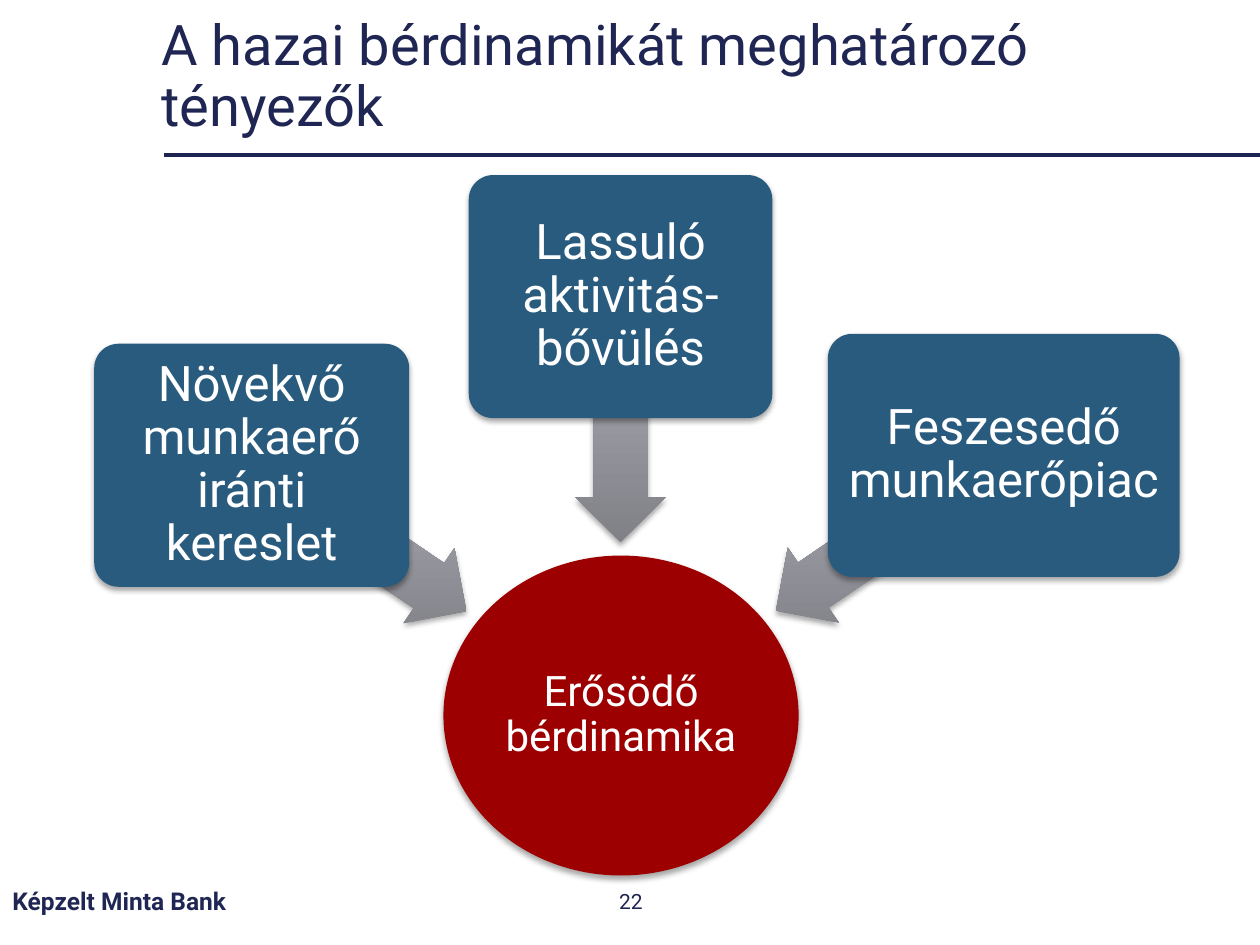
import pptx
import pptx.dml.color
import pptx.enum.shapes
import pptx.enum.text
import pptx.oxml
import pptx.oxml.ns
import pptx.util

Cm = pptx.util.Cm
RGBColor = pptx.dml.color.RGBColor
MSO_SHAPE = pptx.enum.shapes.MSO_SHAPE
PP_ALIGN = pptx.enum.text.PP_ALIGN

NAVY = RGBColor(0x20, 0x26, 0x53)
RULE = RGBColor(0x1E, 0x24, 0x52)
BLUE = RGBColor(0x29, 0x5B, 0x7E)
RED = RGBColor(0x9C, 0x00, 0x00)
WHITE = RGBColor(0xFF, 0xFF, 0xFF)
BLACK = RGBColor(0x00, 0x00, 0x00)
GREY_STOPS = (
    (0, RGBColor(0x80, 0x80, 0x87)),
    (80, RGBColor(0xA6, 0xA6, 0xAF)),
    (100, RGBColor(0xA6, 0xA7, 0xB0)),
)
FONT = "Roboto"
CARD_HEIGHT = 4.9
ARROW_HEIGHT = 1.83

# Card text, left, top, width; arrow centre x, centre y, length, rotation (cm, degrees)
FACTORS = (
    ("Növekvő munkaerő iránti kereslet", (0, 3.4, 6.35), (5.34, 7.32, 5.23, 214.2)),
    ("Lassuló aktivitás-bővülés", (7.55, 0, 6.12), (10.61, 4.93, 4.95, 270)),
    ("Feszesedő munkaerőpiac", (14.79, 3.2, 7.09), (16.03, 7.22, 5.54, 325.7)),
)


def write_text(shape, text, *, size, color, bold=False, align=PP_ALIGN.LEFT,
               line_spacing=None, inset=None):
    frame = shape.text_frame
    frame.word_wrap = True
    frame.vertical_anchor = pptx.enum.text.MSO_ANCHOR.MIDDLE
    if inset is not None:
        frame.margin_left = frame.margin_right = Cm(inset)
        frame.margin_top = frame.margin_bottom = Cm(inset)
    paragraph = frame.paragraphs[0]
    paragraph.alignment = align
    paragraph.line_spacing = line_spacing
    run = paragraph.add_run()
    run.text = text
    run.font.name = FONT
    run.font.size = pptx.util.Pt(size)
    run.font.bold = bold
    run.font.color.rgb = color


def add_drop_shadow(shape):
    shape.shadow.inherit = False
    effects = shape._element.spPr.find(pptx.oxml.ns.qn("a:effectLst"))
    effects.append(pptx.oxml.parse_xml(
        f'<a:outerShdw {pptx.oxml.ns.nsdecls("a")} blurRad="40000" dist="23000" '
        f'dir="5400000" rotWithShape="0"><a:srgbClr val="{BLACK}">'
        '<a:alpha val="35000"/></a:srgbClr></a:outerShdw>'))


def add_block(slide, preset, left, top, width, height, color=None):
    """Add a borderless shape with a drop shadow; lengths in cm."""
    shape = slide.shapes.add_shape(preset, Cm(left), Cm(top), Cm(width), Cm(height))
    if color is not None:
        shape.fill.solid()
        shape.fill.fore_color.rgb = color
    shape.line.fill.background()
    add_drop_shadow(shape)
    return shape


def fill_grey_gradient(shape):
    """Fill from dark at the bottom to light at the top, whatever the rotation."""
    stops = "".join(f'<a:gs pos="{position * 1000}"><a:srgbClr val="{color}"/></a:gs>'
                    for position, color in GREY_STOPS)
    gradient = pptx.oxml.parse_xml(
        f'<a:gradFill {pptx.oxml.ns.nsdecls("a")} rotWithShape="0"><a:gsLst>{stops}'
        '</a:gsLst><a:lin ang="16200000" scaled="0"/></a:gradFill>')
    geometry = shape._element.spPr.find(pptx.oxml.ns.qn("a:prstGeom"))
    geometry.addnext(gradient)


def add_arrow(slide, center_x, center_y, length, rotation):
    arrow = add_block(slide, MSO_SHAPE.LEFT_ARROW, center_x - length / 2,
                      center_y - ARROW_HEIGHT / 2, length, ARROW_HEIGHT)
    arrow.adjustments[0] = 0.6
    arrow.adjustments[1] = 0.5
    arrow.rotation = rotation
    fill_grey_gradient(arrow)


def add_card(slide, text, left, top, width):
    card = add_block(slide, MSO_SHAPE.ROUNDED_RECTANGLE, left, top, width, CARD_HEIGHT, BLUE)
    card.adjustments[0] = 0.1
    write_text(card, text, size=28, color=WHITE, align=PP_ALIGN.CENTER,
               line_spacing=0.9, inset=0.15)


def add_heading(slide, left, top, width, height):
    title = slide.shapes.title
    title.left, title.top, title.width, title.height = map(Cm, (left, top, width, height))
    write_text(title, "A hazai bérdinamikát meghatározó tényezők", size=32, color=NAVY,
               line_spacing=0.9)
    rule_top = Cm(top + height + 0.5)
    rule = slide.shapes.add_connector(pptx.enum.shapes.MSO_CONNECTOR.STRAIGHT,
                                      Cm(left + 0.3), rule_top, Cm(25.4), rule_top)
    rule.line.color.rgb = RULE
    rule.line.width = pptx.util.Pt(2.25)
    rule._element.spPr.append(
        pptx.oxml.parse_xml(f'<a:effectLst {pptx.oxml.ns.nsdecls("a")}/>'))


def add_factor_diagram(slide, left, top):
    """Draw the factor cards with arrows converging on the outcome circle."""
    outcome = add_block(slide, MSO_SHAPE.OVAL, left + 7.04, top + 7.67, 7.16, 6.45, RED)
    write_text(outcome, "Erősödő bérdinamika", size=24, color=WHITE,
               align=PP_ALIGN.CENTER, line_spacing=0.9, inset=0.05)
    for text, (card_x, card_y, width), (arrow_x, arrow_y, length, rotation) in FACTORS:
        add_arrow(slide, left + arrow_x, top + arrow_y, length, rotation)
        add_card(slide, text, left + card_x, top + card_y, width)


def add_footer(slide, left, top, height):
    for text, offset, width, text_format in (
        ("Képzelt Minta Bank", 0, 8.59, {"size": 14, "bold": True}),
        ("22", 9.86, 5.72, {"size": 12, "align": PP_ALIGN.CENTER}),
    ):
        box = slide.shapes.add_textbox(Cm(left + offset), Cm(top), Cm(width), Cm(height))
        write_text(box, text, color=NAVY, **text_format)


def main():
    presentation = pptx.Presentation()
    presentation.slide_width = Cm(25.4)
    presentation.slide_height = Cm(19.05)
    slide = presentation.slides.add_slide(presentation.slide_layouts[5])
    add_heading(slide, 3, 0.51, 20.8, 2.11)
    add_footer(slide, 0, 17.65, 1.02)
    add_factor_diagram(slide, 1.9, 3.53)
    presentation.save("out.pptx")


if __name__ == "__main__":
    main()
